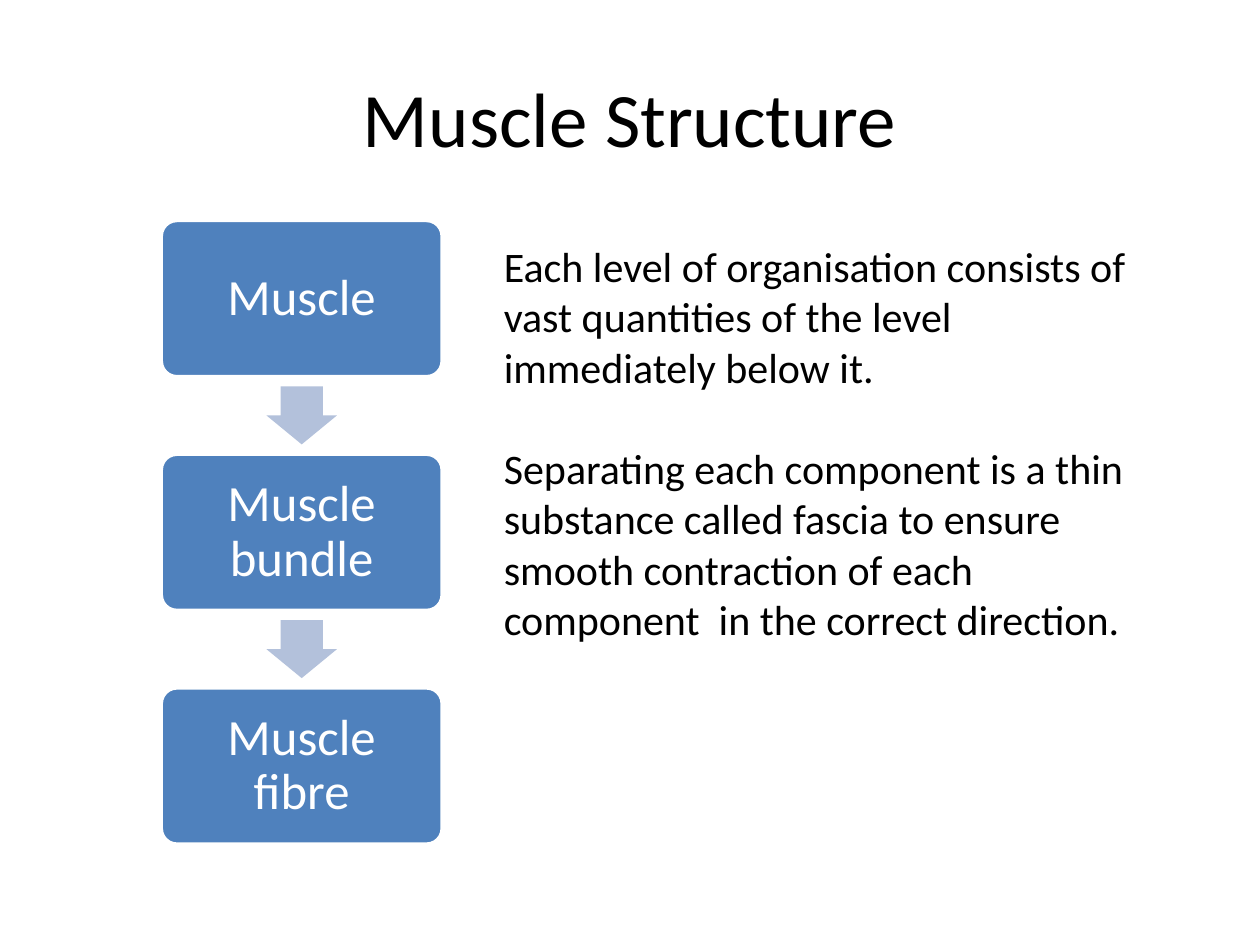
from pptx import Presentation
from pptx.dml.color import RGBColor
from pptx.enum.shapes import MSO_SHAPE
from pptx.enum.text import MSO_ANCHOR, PP_ALIGN
from pptx.util import Inches, Pt

ROUNDED = MSO_SHAPE.ROUNDED_RECTANGLE
DOWN_ARROW = MSO_SHAPE.DOWN_ARROW
MIDDLE = MSO_ANCHOR.MIDDLE
CENTER = PP_ALIGN.CENTER

FONT = "Calibri"
COLORS = {"text": "000000", "level": "4F81BD", "arrow": "B3C1DB", "white": "FFFFFF"}
LEVELS = ["Muscle", "Muscle bundle", "Muscle fibre"]
NOTES = [
    "Each level of organisation consists of  vast quantities of the level "
    "immediately below it.",
    "Separating each component is a thin substance called fascia to ensure "
    "smooth contraction of each component  in the correct direction.",
]


def rgb(name):
    return RGBColor.from_string(COLORS[name])


def add_run(paragraph, text, size, color):
    run = paragraph.add_run()
    run.text = text
    run.font.name = FONT
    run.font.size = Pt(size)
    run.font.color.rgb = rgb(color)


def add_filled(slide, kind, left, top, width, height, color):
    shape = slide.shapes.add_shape(
        kind, Inches(left), Inches(top), Inches(width), Inches(height))
    shape.shadow.inherit = False
    shape.fill.solid()
    shape.fill.fore_color.rgb = rgb(color)
    return shape


def set_title(slide, left, top, width, height):
    title = slide.shapes.title
    title.left, title.top = Inches(left), Inches(top)
    title.width, title.height = Inches(width), Inches(height)
    frame = title.text_frame
    frame.vertical_anchor = MIDDLE
    heading = frame.paragraphs[0]
    heading.alignment = CENTER
    add_run(heading, "Muscle Structure", 44, "text")


def add_level(slide, name, left, top, width, height):
    level = add_filled(slide, ROUNDED, left, top, width, height, "level")
    level.adjustments[0] = 0.1
    level.line.color.rgb = rgb("white")
    level.line.width = Pt(2)
    frame = level.text_frame
    frame.word_wrap = True
    frame.vertical_anchor = MIDDLE
    frame.margin_left = frame.margin_right = Inches(0.16)
    frame.margin_top = frame.margin_bottom = Inches(0.12)
    label = frame.paragraphs[0]
    label.alignment = CENTER
    label.line_spacing = 0.9
    add_run(label, name, 29, "white")


def add_level_flow(slide, left, top, width, height):
    """Stack the levels evenly, with an arrow centred in each gap."""
    level_height, arrow_width, arrow_height = 1.24, 0.56, 0.46
    pitch = (height - level_height) / (len(LEVELS) - 1)
    gap = pitch - level_height
    for index, name in enumerate(LEVELS):
        level_top = top + index * pitch
        if index:
            arrow = add_filled(
                slide, DOWN_ARROW, left + (width - arrow_width) / 2,
                level_top - (gap + arrow_height) / 2,
                arrow_width, arrow_height, "arrow")
            arrow.adjustments[0] = 0.6
            arrow.adjustments[1] = 0.5
            arrow.line.fill.background()
        add_level(slide, name, left, level_top, width, level_height)


def add_notes_text(slide, left, top, width, height):
    frame = slide.shapes.add_textbox(
        Inches(left), Inches(top), Inches(width), Inches(height)).text_frame
    frame.word_wrap = True
    for index, note in enumerate(NOTES):
        paragraph = frame.add_paragraph() if index else frame.paragraphs[0]
        if index:
            paragraph.space_before = Pt(29)
        add_run(paragraph, note, 24, "text")


def main():
    deck = Presentation()
    deck.slide_width, deck.slide_height = Inches(10), Inches(7.5)
    slide = deck.slides.add_slide(deck.slide_layouts[5])
    set_title(slide, 0.5, 0.3, 9, 1.25)
    add_level_flow(slide, 1.28, 1.75, 2.23, 4.95)
    add_notes_text(slide, 3.9, 1.86, 5.28, 3.33)
    deck.save("out.pptx")


if __name__ == "__main__":
    main()
